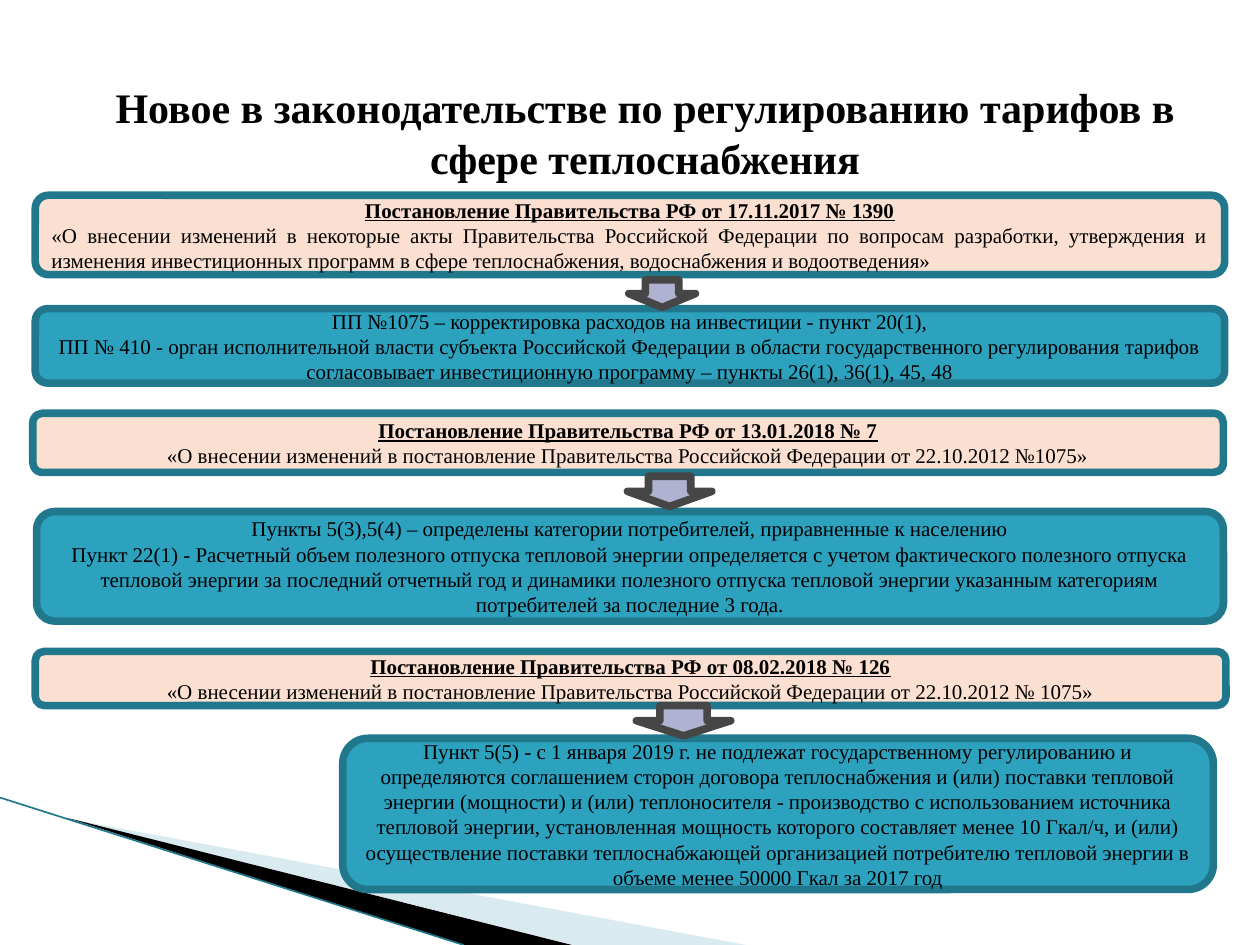
from dataclasses import dataclass

from lxml import etree
from pptx import Presentation
from pptx.dml.color import RGBColor
from pptx.enum.shapes import MSO_CONNECTOR, MSO_SHAPE
from pptx.enum.text import MSO_ANCHOR, PP_ALIGN
from pptx.oxml.ns import qn
from pptx.util import Pt

PX = 9144  # 100 px to the inch
ROUNDED, ARROW = MSO_SHAPE.ROUNDED_RECTANGLE, MSO_SHAPE.DOWN_ARROW
STRAIGHT = MSO_CONNECTOR.STRAIGHT
TOP, MIDDLE = MSO_ANCHOR.TOP, MSO_ANCHOR.MIDDLE
CENTER, JUSTIFY = PP_ALIGN.CENTER, PP_ALIGN.JUSTIFY


@dataclass(frozen=True)
class Theme:
    font: str = "Times New Roman"
    ink: str = "000000"
    decree: str = "FBE0D1"
    detail: str = "2DA2BF"
    border: str = "21788D"
    arrow: str = "AFB2D0"
    arrow_border: str = "464646"
    wedge: str = "A0CBDC"
    title_size: int = 24
    text_size: int = 12
    border_width: float = 4.33
    edge_width: float = 0.95


THEME = Theme()

TITLE = "Новое в законодательстве по регулированию тарифов в сфере теплоснабжения"

# Each step: decree box, heading, subject, alignment, arrow box, detail box, detail lines
STEPS = [
    ((28, 155, 944, 63), "Постановление Правительства РФ от 17.11.2017 № 1390",
     "«О внесении изменений в некоторые акты Правительства Российской Федерации "
     "по вопросам разработки, утверждения и изменения инвестиционных программ "
     "в сфере теплоснабжения, водоснабжения и водоотведения»", JUSTIFY,
     (499, 222, 53, 22), (28, 245, 944, 59),
     ["ПП №1075 – корректировка расходов на инвестиции - пункт 20(1),",
      "ПП № 410 - орган исполнительной власти субъекта Российской Федерации "
      "в области государственного регулирования тарифов согласовывает "
      "инвестиционную программу – пункты 26(1), 36(1), 45, 48"]),
    ((26, 328, 945, 47), "Постановление Правительства РФ от 13.01.2018 № 7",
     "«О внесении изменений в постановление Правительства Российской Федерации "
     "от 22.10.2012 №1075»", CENTER,
     (498, 378, 67, 24), (29, 406, 942, 87),
     ["Пункты 5(3),5(4) – определены категории потребителей, приравненные к населению",
      "Пункт 22(1) - Расчетный объем полезного отпуска тепловой энергии "
      "определяется с учетом фактического полезного отпуска тепловой энергии "
      "за последний отчетный год и динамики полезного отпуска тепловой энергии "
      "указанным категориям потребителей за последние 3 года."]),
    ((28, 517, 945, 43), "Постановление Правительства РФ от 08.02.2018 № 126",
     "«О внесении изменений в постановление Правительства Российской Федерации "
     "от 22.10.2012 № 1075»", CENTER,
     (505, 560, 75, 24), (272, 586, 691, 120),
     ["Пункт 5(5) - с 1 января 2019 г. не подлежат государственному регулированию "
      "и определяются соглашением сторон договора теплоснабжения и (или) поставки "
      "тепловой энергии (мощности) и (или) теплоносителя - производство "
      "с использованием источника тепловой энергии, установленная мощность которого "
      "составляет менее 10 Гкал/ч, и (или) осуществление поставки теплоснабжающей "
      "организацией потребителю тепловой энергии в объеме менее 50000 Гкал за 2017 год"]),
]


def emu(lengths):
    return [length * PX for length in lengths]


def paint(fill, color):
    fill.solid()
    fill.fore_color.rgb = RGBColor.from_string(color)


def write(frame, lines, size, anchor):
    """Fill a text frame with (text, alignment, strong, underlined) lines."""
    frame.word_wrap = True
    frame.vertical_anchor = anchor
    for index, (text, alignment, strong, underlined) in enumerate(lines):
        para = frame.add_paragraph() if index else frame.paragraphs[0]
        para.alignment = alignment
        span = para.add_run()
        span.text = text
        formats = {"name": THEME.font, "size": Pt(size),
                   "bold": strong, "underline": underlined}
        for name, value in formats.items():
            setattr(span.font, name, value)
        span.font.color.rgb = RGBColor.from_string(THEME.ink)


def add_outlined(page, kind, box, fill, border):
    shape = page.shapes.add_shape(kind, *emu(box))
    shape.shadow.inherit = False
    paint(shape.fill, fill)
    paint(shape.line.fill, border)
    shape.line.width = Pt(THEME.border_width)
    return shape


def add_title(page, box):
    title = page.shapes.title
    title.left, title.top, title.width, title.height = emu(box)
    write(title.text_frame, [(TITLE, CENTER, True, False)], THEME.title_size, TOP)


def add_wedge(page, points, color, opacity):
    start, *rest = points
    builder = page.shapes.build_freeform(*start, scale=PX)
    builder.add_line_segments(rest, close=True)
    wedge = builder.convert_to_shape()
    wedge.shadow.inherit = False
    paint(wedge.fill, color)
    wedge.line.fill.background()
    tint = wedge.fill._xPr.find(qn("a:solidFill"))[0]
    etree.SubElement(tint, qn("a:alpha")).set("val", str(opacity * 1000))


def add_corner(page, box):
    """Two wedges and an edge line running down from the left side."""
    left, top, width, height = box
    bottom = top + height
    add_wedge(page, [(left + 55, top + 17), (left + width, bottom),
                     (left + 456, bottom)], THEME.wedge, 40)
    add_wedge(page, [(left + 53, top + 16), (left + 454, bottom),
                     (left + 368, bottom)], THEME.ink, 100)
    edge = page.shapes.add_connector(
        STRAIGHT, *emu((left, top, left + 368, bottom)))
    paint(edge.line.fill, THEME.border)
    edge.line.width = Pt(THEME.edge_width)
    etree.SubElement(edge._element.spPr, qn("a:effectLst"))


def add_card(page, box, fill, lines):
    card = add_outlined(page, ROUNDED, box, fill, THEME.border)
    write(card.text_frame, lines, THEME.text_size, MIDDLE)


def main():
    deck = Presentation()
    deck.slide_width, deck.slide_height = emu((1000, 750))
    page = deck.slides.add_slide(deck.slide_layouts[5])
    add_title(page, (75, 60, 874, 91))
    add_corner(page, (0, 633, 592, 117))

    # Decrees and what they change
    for decree, heading, subject, alignment, _, detail, lines in STEPS:
        add_card(page, decree, THEME.decree,
                 [(heading, CENTER, True, True), (subject, alignment, False, False)])
        add_card(page, detail, THEME.detail,
                 [(line, CENTER, False, False) for line in lines])

    # Arrows lie above the cards
    for step in STEPS:
        add_outlined(page, ARROW, step[4], THEME.arrow, THEME.arrow_border)

    deck.save("out.pptx")


if __name__ == "__main__":
    main()
